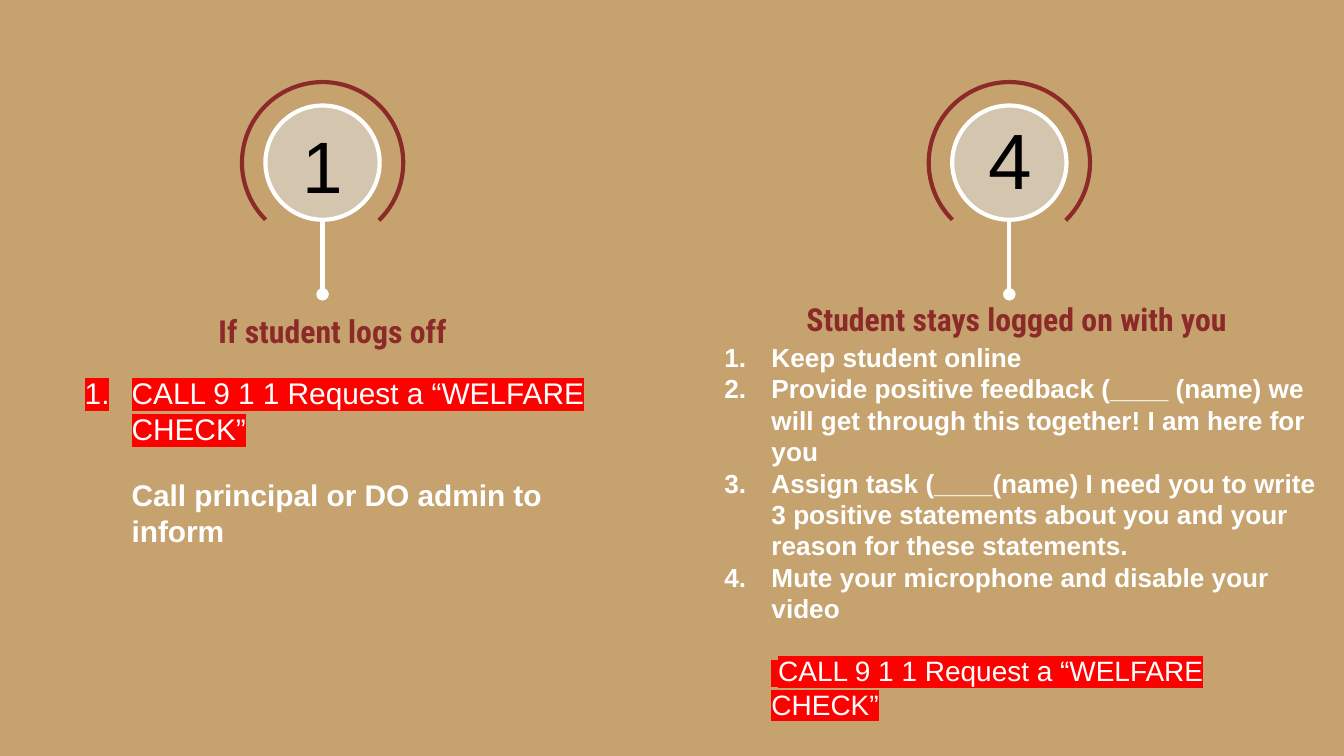
"""Build a slide comparing the steps for two student situations."""
from dataclasses import dataclass

from lxml import etree
from pptx import Presentation
from pptx.dml.color import RGBColor
from pptx.enum.shapes import MSO_CONNECTOR, MSO_SHAPE
from pptx.enum.text import MSO_ANCHOR, MSO_AUTO_SIZE, PP_ALIGN
from pptx.oxml.ns import qn
from pptx.util import Inches, Pt

STRAIGHT = MSO_CONNECTOR.STRAIGHT
ARC, OVAL = MSO_SHAPE.ARC, MSO_SHAPE.OVAL
TOP, NO_FIT = MSO_ANCHOR.TOP, MSO_AUTO_SIZE.NONE
CENTER, LEFT = PP_ALIGN.CENTER, PP_ALIGN.LEFT

TAN = RGBColor(0xC6, 0xA3, 0x6E)
SAND = RGBColor(0xD4, 0xC6, 0xAE)
MAROON = RGBColor(0x8C, 0x2A, 0x2A)
WHITE = RGBColor(0xFF, 0xFF, 0xFF)
BLACK = RGBColor(0x00, 0x00, 0x00)
RED = RGBColor(0xFF, 0x00, 0x00)

SLIDE_WIDTH = Inches(10)
SLIDE_HEIGHT = SLIDE_WIDTH * 9 // 16
ARC_SIZE, CIRCLE_SIZE = 1.2, 0.85
MARKER_MIDDLE, STEM_END = 1.21, 2.19
LINE_WIDTH = Pt(2.25)
WELFARE_CALL = "CALL 9 1 1 Request a “WELFARE CHECK”"


@dataclass
class Span:
    text: str
    size: float
    bold: bool = False
    highlighted: bool = False


@dataclass
class Item:
    spans: list[Span]
    numbered: bool = True
    space: float = 0


@dataclass
class Column:
    center: float
    number: str
    number_size: float
    number_box: tuple
    heading: str
    heading_holder: int
    heading_box: tuple
    list_holder: int
    list_box: tuple
    items: list[Item]


COLUMNS = [
    Column(2.4, "1", 39, (2.11, 0.8, 0.59, 0.48),
           "If student logs off", 0, (0.3, 2.22, 4.35, 0.61),
           2, (0.38, 2.69, 4.27, 1.6),
           [Item([Span(WELFARE_CALL, 16, highlighted=True)]),
            Item([Span("Call principal or DO admin to inform", 16, bold=True)], False, 16)]),
    Column(7.51, "4", 42, (7.22, 0.73, 0.59, 0.61),
           "Student stays logged on with you", 1, (5.35, 2.13, 4.43, 0.61),
           4, (5.14, 2.44, 4.77, 2.93),
           [Item([Span(text, 14, bold=True)]) for text in (
               "Keep student online",
               "Provide positive feedback (____ (name) we will get through this together! "
               "I am here for you",
               "Assign task (____(name) I need you to write 3 positive statements about you "
               "and your reason for these statements.",
               "Mute your microphone and disable your video")]
           + [Item([Span(" ", 13, highlighted=True),
                    Span(WELFARE_CALL, 15, highlighted=True)], False, 16)]),
]


def add_color(parent, tag: str, color: RGBColor):
    """Append a DrawingML colour element and return it."""
    element = etree.SubElement(parent, qn(tag))
    etree.SubElement(element, qn("a:srgbClr"), val=str(color))
    return element


def place(box, position: tuple) -> None:
    """Move a text box and give its frame the common settings."""
    box.left, box.top, box.width, box.height = map(Inches, position)
    frame = box.text_frame
    frame.word_wrap = True
    frame.auto_size = NO_FIT
    frame.vertical_anchor = TOP
    frame.margin_left = frame.margin_right = Inches(0.1)
    frame.margin_top = frame.margin_bottom = Inches(0.1)


def style(run, size: float, color: RGBColor, bold: bool = False, name: str = "Arial") -> None:
    """Format one run of text."""
    font = run.font
    font.size, font.bold, font.name = Pt(size), bold, name
    font.color.rgb = color


def write_line(box, position: tuple, text: str, size: float, color: RGBColor,
               bold: bool = False, name: str = "Arial") -> None:
    """Write a single centred line into a box."""
    place(box, position)
    box.text_frame.text = text
    paragraph = box.text_frame.paragraphs[0]
    paragraph.alignment = CENTER
    paragraph.space_before = Pt(0)
    style(paragraph.runs[0], size, color, bold, name)


def write_list(box, position: tuple, items: list[Item]) -> None:
    """Fill a placeholder with numbered and plain indented items."""
    place(box, position)
    frame = box.text_frame
    for index, item in enumerate(items):
        paragraph = frame.add_paragraph() if index else frame.paragraphs[0]
        paragraph.alignment = LEFT
        paragraph.line_spacing = 1.0
        paragraph.space_before = Pt(item.space)
        paragraph.space_after = Pt(0)
        properties = paragraph._p.get_or_add_pPr()
        properties.set("marL", str(Inches(0.5)))
        properties.set("indent", str(Inches(-0.35 if item.numbered else 0)))
        if item.numbered:
            add_color(properties, "a:buClr", WHITE)
            etree.SubElement(properties, qn("a:buFont"), typeface="Arial")
            etree.SubElement(properties, qn("a:buAutoNum"), type="arabicPeriod")
        else:
            etree.SubElement(properties, qn("a:buNone"))
        for span in item.spans:
            run = paragraph.add_run()
            run.text = span.text
            style(run, span.size, WHITE, span.bold)
            if span.highlighted:
                run_properties = run.font._element
                mark = add_color(run_properties, "a:highlight", RED)
                run_properties.find(qn("a:solidFill")).addnext(mark)


def draw_marker(page, center: float) -> None:
    """Draw an arc, a circle and a stem grouped around a centre line."""
    group = page.shapes.add_group_shape()

    def add_round(kind, size: float, color: RGBColor):
        shape = group.shapes.add_shape(
            kind, Inches(center - size / 2), Inches(MARKER_MIDDLE - size / 2),
            Inches(size), Inches(size))
        shape.shadow.inherit = False
        shape.line.color.rgb = color
        shape.line.width = LINE_WIDTH
        return shape

    arc = add_round(ARC, ARC_SIZE, MAROON)
    arc.fill.background()
    arc.rotation = 225
    arc.adjustments[0], arc.adjustments[1] = 162, 108.39
    circle = add_round(OVAL, CIRCLE_SIZE, WHITE)
    circle.fill.solid()
    circle.fill.fore_color.rgb = SAND
    stem = group.shapes.add_connector(
        STRAIGHT, Inches(center), Inches(MARKER_MIDDLE + CIRCLE_SIZE / 2),
        Inches(center), Inches(STEM_END))
    stem.line.color.rgb = WHITE
    stem.line.width = LINE_WIDTH
    etree.SubElement(stem.line._get_or_add_ln(), qn("a:tailEnd"), type="oval")
    etree.SubElement(stem._element.spPr, qn("a:effectLst"))


def draw_column(page, column: Column) -> None:
    """Draw one column with its marker, heading and list."""
    holders = {holder.placeholder_format.idx: holder for holder in page.placeholders}
    draw_marker(page, column.center)
    write_list(holders[column.list_holder], column.list_box, column.items)
    write_line(holders[column.heading_holder], column.heading_box, column.heading,
               17, MAROON, True, "Roboto Condensed")
    number = page.shapes.add_textbox(*map(Inches, column.number_box))
    write_line(number, column.number_box, column.number, column.number_size, BLACK)


def main() -> None:
    """Create and save the deck."""
    deck = Presentation()
    deck.slide_width, deck.slide_height = SLIDE_WIDTH, SLIDE_HEIGHT
    page = deck.slides.add_slide(deck.slide_layouts.get_by_name("Comparison"))
    page.background.fill.solid()
    page.background.fill.fore_color.rgb = TAN
    for column in COLUMNS:
        draw_column(page, column)
    for holder in list(page.placeholders):
        if not holder.text_frame.text:
            holder._element.getparent().remove(holder._element)
    deck.save("out.pptx")


if __name__ == "__main__":
    main()
